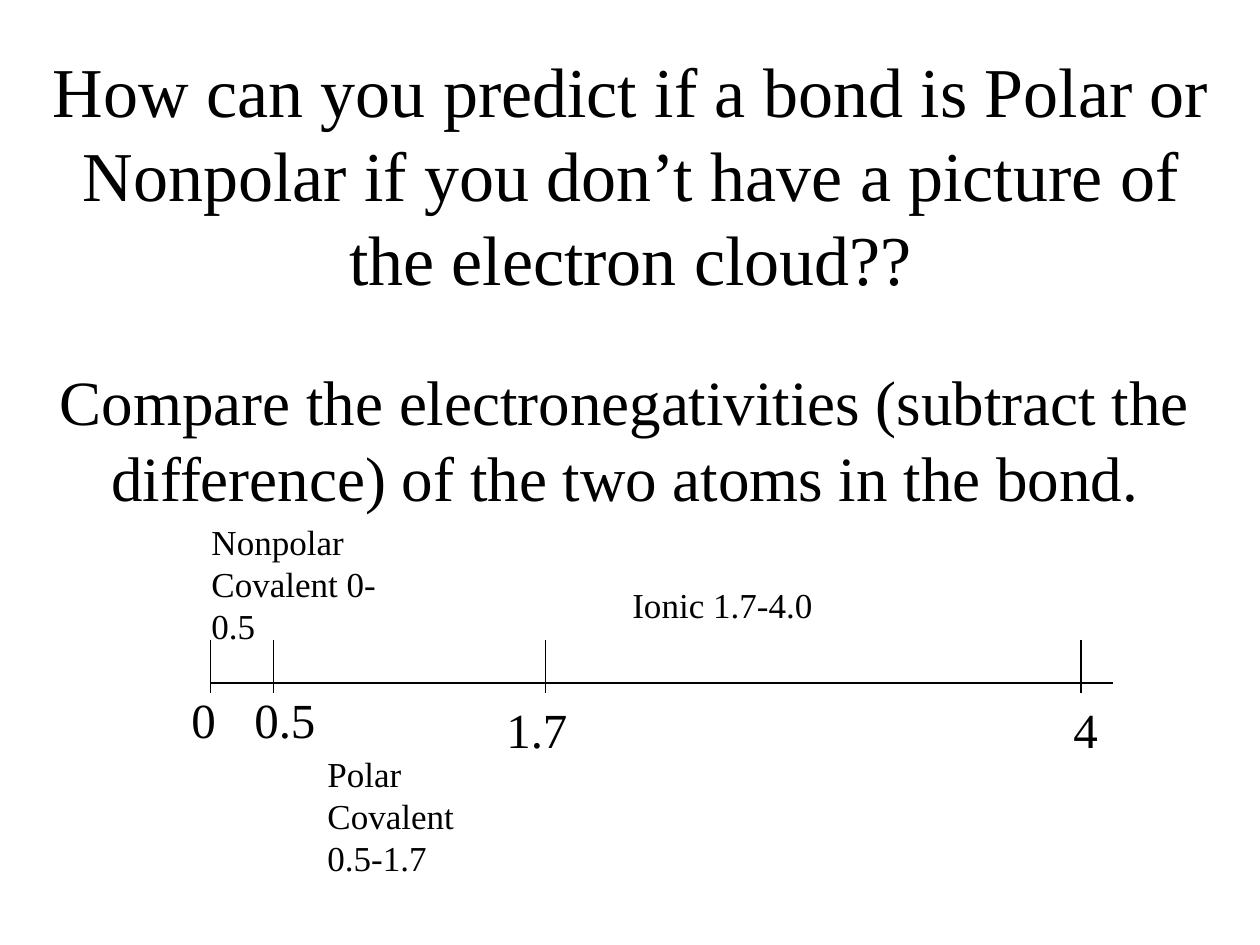
"""Build a slide on predicting bond polarity from electronegativity differences."""
from lxml import etree
from pptx import Presentation
from pptx import util as u
from pptx.dml.color import RGBColor
from pptx.enum import shapes, text
from pptx.oxml.ns import qn


def write(sp, content, size, align=text.PP_ALIGN.LEFT, color="000000"):
    tf = sp.text_frame
    tf.word_wrap = True
    tf.auto_size = text.MSO_AUTO_SIZE.NONE
    tf.vertical_anchor = text.MSO_ANCHOR.TOP
    p = tf.paragraphs[0]
    p.alignment = align
    r = p.add_run()
    r.text = content
    r.font.size = u.Pt(size)
    r.font.name = "Times New Roman"
    r.font.color.rgb = RGBColor.from_string(color)


def line(s, x1, y1, x2, y2, color="000000"):
    sp = s.shapes.add_connector(shapes.MSO_CONNECTOR.STRAIGHT,
                                u.Inches(x1), u.Inches(y1), u.Inches(x2), u.Inches(y2))
    sp.line.color.rgb = RGBColor.from_string(color)
    sp.line.width = u.Pt(0.75)
    etree.SubElement(sp._element.spPr, qn("a:effectLst"))


prs = Presentation()
prs.slide_width, prs.slide_height = u.Inches(10), u.Inches(7.5)
s = prs.slides.add_slide(prs.slide_layouts[5])

title = s.shapes.title
title.left, title.top = u.Inches(0.17), u.Inches(0.33)
title.width, title.height = u.Inches(9.67), u.Inches(2.79)
write(title, "How can you predict if a bond is Polar or Nonpolar if you don’t have "
      "a picture of the electron cloud??", 40, align=text.PP_ALIGN.CENTER)

line(s, 1.67, 5.42, 8.83, 5.42)
for x in (1.67, 2.17, 4.33, 8.58):
    line(s, x, 5.08, x, 5.5)

center, left = text.PP_ALIGN.CENTER, text.PP_ALIGN.LEFT
for content, x, y, w, h, size, align in (
    ("Compare the electronegativities (subtract the difference) of the two atoms "
     "in the bond.", 0, 2.83, 9.92, 1.92, 36, center),
    ("0", 1.42, 5.42, 0.75, 0.57, 28, left),
    ("0.5", 1.92, 5.42, 0.75, 0.57, 28, left),
    ("1.7", 3.92, 5.5, 0.75, 0.57, 28, left),
    ("4", 8.42, 5.5, 0.5, 0.57, 28, left),
    ("Nonpolar Covalent 0-0.5", 1.58, 4.08, 1.58, 1.11, 20, left),
    ("Polar Covalent 0.5-1.7", 2.5, 5.92, 1.58, 1.11, 20, left),
    ("Ionic 1.7-4.0", 4.92, 4.58, 2.92, 0.44, 20, left),
):
    sp = s.shapes.add_textbox(u.Inches(x), u.Inches(y), u.Inches(w), u.Inches(h))
    write(sp, content, size, align=align)

prs.save("out.pptx")
